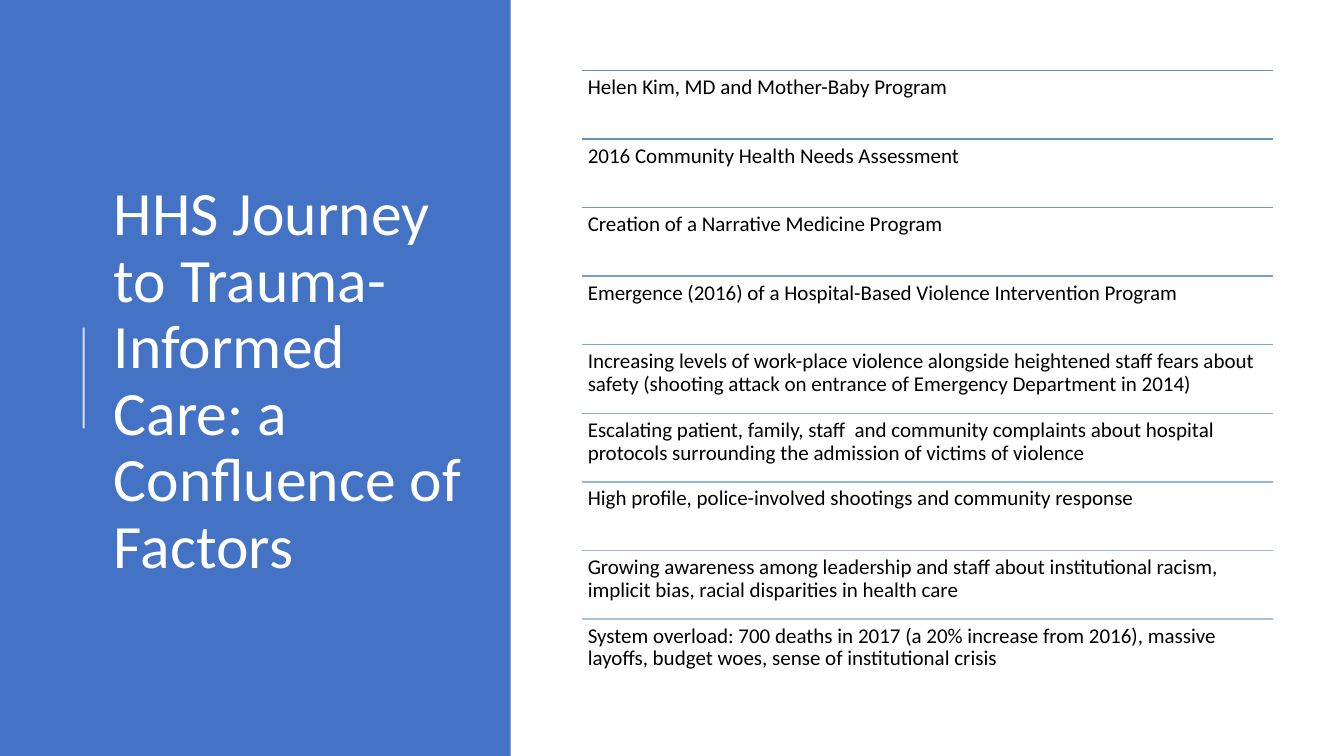
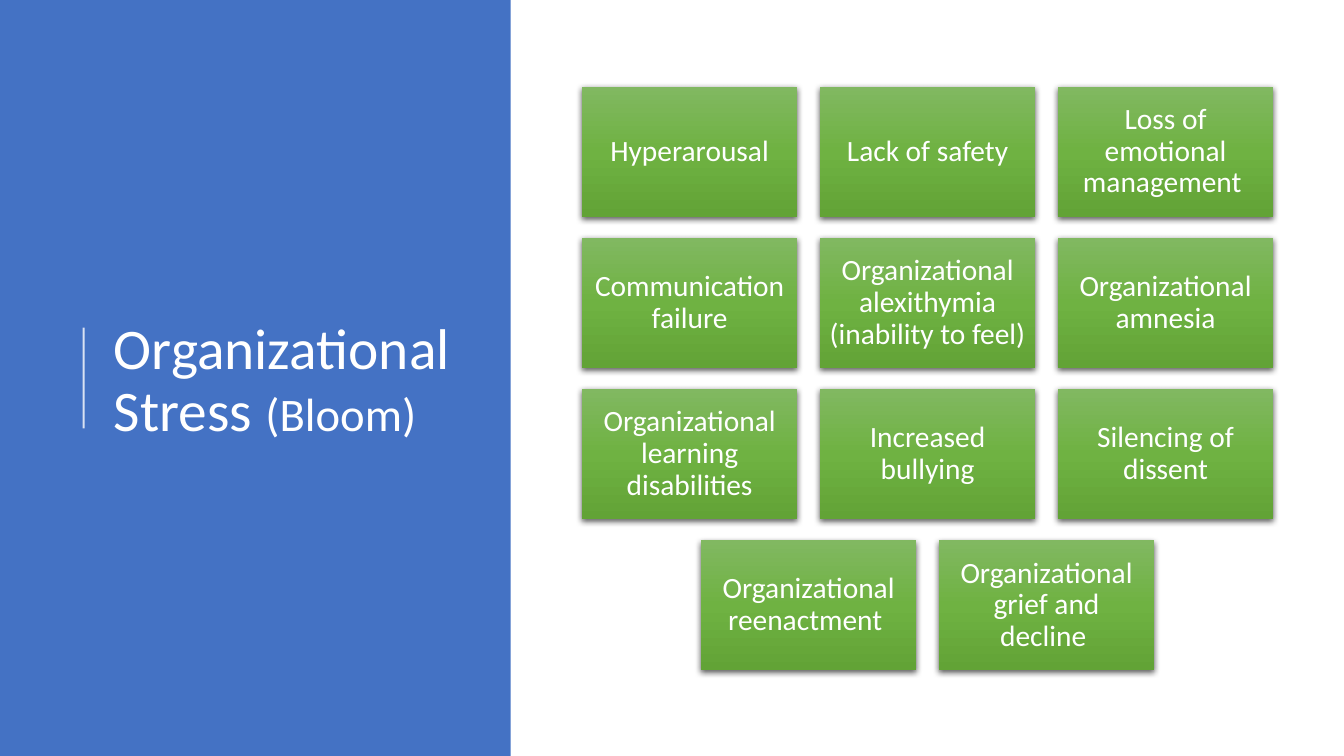
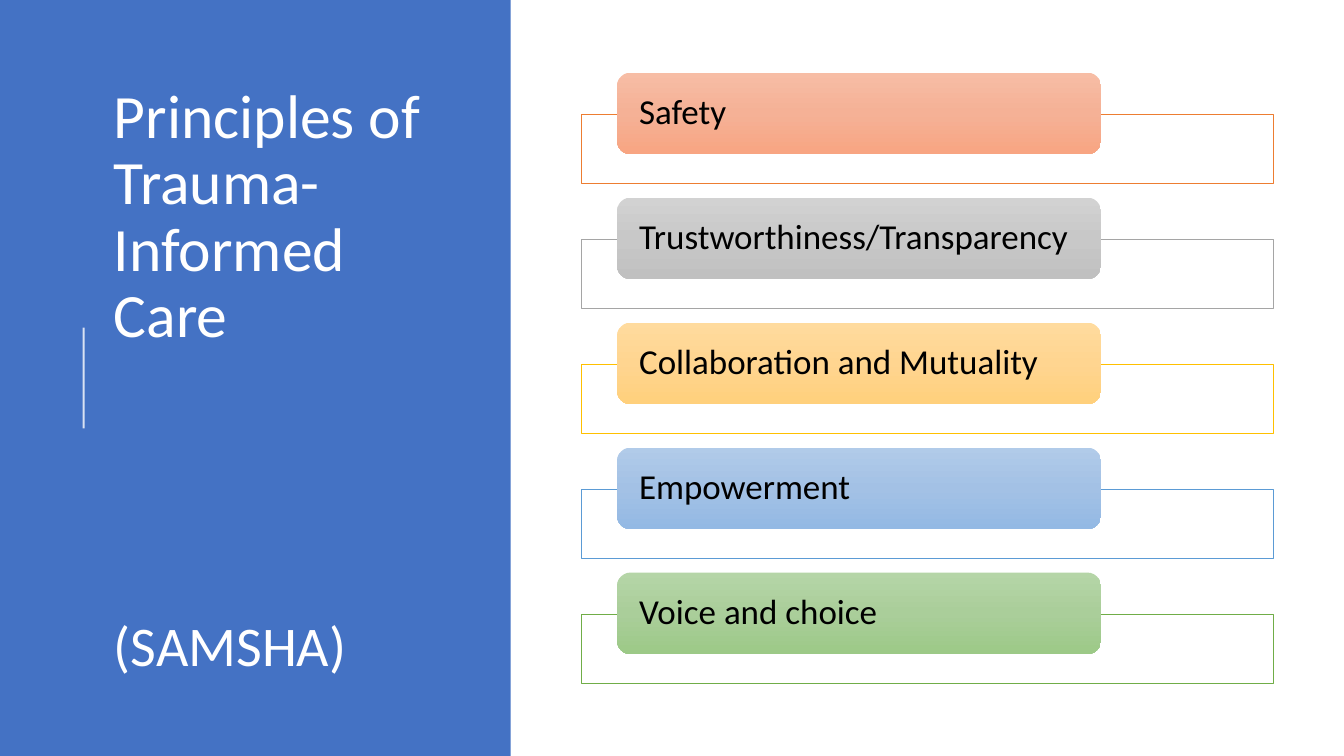
from copy import deepcopy
from dataclasses import dataclass

from lxml.etree import SubElement
from pptx import Presentation
from pptx.dml.color import RGBColor
from pptx.enum.shapes import MSO_CONNECTOR as Connector, MSO_SHAPE as Preset
from pptx.enum.text import MSO_ANCHOR as Anchor, MSO_AUTO_SIZE as AutoSize, PP_ALIGN as Align
from pptx.oxml.ns import qn
from pptx.util import Inches, Pt

SLIDE_WIDTH, SLIDE_HEIGHT = 13.33, 7.5
BAND_SHARE = 0.38
CONTENT_LEFT, CONTENT_WIDTH = 5.77, 6.86
FONT = "Calibri"
LINE_SPACING = 0.9
COLORS = {
    "band": "4472C4",
    "white": "FFFFFF",
    "black": "000000",
    "rule_first": "538DC1",
    "rule_last": "A5C1E3",
}
CARD_GRADIENT = ("81B861", "6FB242", "62A336")


@dataclass(frozen=True)
class Box:
    left: float
    top: float
    width: float
    height: float

    def lengths(self) -> tuple:
        return tuple(Inches(value) for value in (self.left, self.top, self.width, self.height))


@dataclass(frozen=True)
class Grid:
    left: float
    top: float
    cell_width: float
    cell_height: float
    column_pitch: float
    row_pitch: float

    def cell(self, column: float, row: int) -> Box:
        return Box(self.left + column * self.column_pitch, self.top + row * self.row_pitch,
                   self.cell_width, self.cell_height)


@dataclass(frozen=True)
class TitlePart:
    text: str
    size: float
    space_before: float | None = None


@dataclass(frozen=True)
class Principle:
    text: str
    outline: str
    gradient: tuple


TITLE_BOX = Box(1.03, 0.78, 3.69, 6.02)
FACTOR_GRID = Grid(CONTENT_LEFT, 0.7, CONTENT_WIDTH, 0.68, 0, 0.68)
CARD_GRID = Grid(CONTENT_LEFT, 0.86, 2.14, 1.29, 2.36, 1.5)
FRAME_GRID = Grid(CONTENT_LEFT, 1.13, CONTENT_WIDTH, 0.69, 0, 1.24)
PILL_GRID = Grid(6.12, 0.72, 4.8, 0.81, 0, 1.24)

FACTORS = (
    "Helen Kim, MD and Mother-Baby Program",
    "2016 Community Health Needs Assessment",
    "Creation of a Narrative Medicine Program",
    "Emergence (2016) of a Hospital-Based Violence Intervention Program",
    "Increasing levels of work-place violence alongside heightened staff fears about safety "
    "(shooting attack on entrance of Emergency Department in 2014)",
    "Escalating patient, family, staff  and community complaints about hospital protocols "
    "surrounding the admission of victims of violence",
    "High profile, police-involved shootings and community response",
    "Growing awareness among leadership and staff about institutional racism, implicit bias, "
    "racial disparities in health care",
    "System overload: 700 deaths in 2017 (a 20% increase from 2016), massive layoffs, "
    "budget woes, sense of institutional crisis",
)
STRESS_ROWS = (
    ("Hyperarousal", "Lack of safety", "Loss of emotional management "),
    ("Communication failure", "Organizational alexithymia (inability to feel)",
     "Organizational amnesia"),
    ("Organizational learning disabilities", "Increased bullying", "Silencing of dissent"),
    ("Organizational reenactment ", "Organizational grief and decline "),
)
PRINCIPLES = (
    Principle("Safety", "ED7D31", ("F7BDA5", "F5B196", "F8A582")),
    Principle("Trustworthiness/Transparency", "A5A5A5", ("D2D2D2", "C8C8C8", "C0C0C0")),
    Principle("Collaboration and Mutuality", "FFC000", ("FFDB9E", "FFD590", "FFD07C")),
    Principle("Empowerment", "5B9BD5", ("B1CBE9", "A3C1E5", "93B9E4")),
    Principle("Voice and choice", "70AD47", ("B5D5A7", "AACE9A", "9CC987")),
)


def rgb(value: str) -> RGBColor:
    return RGBColor.from_string(value)


def blend(first: str, last: str, share: float) -> str:
    pairs = zip(rgb(first), rgb(last))
    return "".join(f"{round(start + (end - start) * share):02X}" for start, end in pairs)


def set_alpha(parent, percent: int) -> None:
    color = next(parent.iter(qn("a:srgbClr")))
    SubElement(color, qn("a:alpha")).set("val", str(percent * 1000))


def format_run(run, size: float, color: str) -> None:
    run.font.name = FONT
    run.font.size = Pt(size)
    run.font.color.rgb = rgb(color)


def set_text(shape, text: str, size: float, color: str, insets: tuple,
             anchor=Anchor.MIDDLE, align=Align.LEFT) -> None:
    frame = shape.text_frame
    frame.text = text
    frame.word_wrap = True
    frame.vertical_anchor = anchor
    frame.margin_left = frame.margin_right = Inches(insets[0])
    frame.margin_top = frame.margin_bottom = Inches(insets[1])
    paragraph = frame.paragraphs[0]
    paragraph.alignment = align
    paragraph.line_spacing = LINE_SPACING
    format_run(paragraph.runs[0], size, color)


def add_box(slide, preset, box: Box, fill: str | tuple):
    shape = slide.shapes.add_shape(preset, *box.lengths())
    shape.shadow.inherit = False
    shape.line.fill.background()
    if isinstance(fill, str):
        shape.fill.solid()
        shape.fill.fore_color.rgb = rgb(fill)
        return shape
    shape.fill.gradient()
    shape.fill.gradient_angle = 270
    stops = next(shape.element.spPr.iter(qn("a:gsLst")))
    stops.append(deepcopy(stops[-1]))
    for stop, color, position in zip(shape.fill.gradient_stops, fill, (0, 0.5, 1)):
        stop.color.rgb = rgb(color)
        stop.position = position
    return shape


def add_card_shadow(shape) -> None:
    effects = shape.element.spPr.find(qn("a:effectLst"))
    shadow = SubElement(effects, qn("a:outerShdw"), blurRad=str(Pt(4.5)), dist=str(Pt(1.5)),
                        dir="5400000", algn="ctr", rotWithShape="0")
    SubElement(shadow, qn("a:srgbClr")).set("val", COLORS["black"])
    set_alpha(shadow, 63)


def add_line(slide, start: tuple, end: tuple, color: str, width: float):
    points = (Inches(value) for value in (*start, *end))
    line = slide.shapes.add_connector(Connector.STRAIGHT, *points)
    line.line.color.rgb = rgb(color)
    line.line.width = Pt(width)
    SubElement(line.element.spPr, qn("a:effectLst"))
    return line


def add_titled_slide(presentation, parts: tuple):
    slide = presentation.slides.add_slide(presentation.slide_layouts[5])
    add_box(slide, Preset.RECTANGLE, Box(0, 0, SLIDE_WIDTH * BAND_SHARE, SLIDE_HEIGHT),
            COLORS["band"])
    accent = add_line(slide, (0.83, 4.25), (0.83, 3.25), COLORS["white"], 1.5)
    set_alpha(accent.element.spPr, 80)
    title = slide.shapes.title
    title.left, title.top, title.width, title.height = TITLE_BOX.lengths()
    title.element.getparent().append(title.element)
    frame = title.text_frame
    frame.word_wrap = True
    frame.auto_size = AutoSize.NONE
    frame.vertical_anchor = Anchor.MIDDLE
    paragraph = frame.paragraphs[0]
    for part in parts:
        if part.space_before is not None:
            paragraph = frame.add_paragraph()
            paragraph.space_before = Pt(part.space_before)
        paragraph.alignment = Align.LEFT
        paragraph.line_spacing = LINE_SPACING
        run = paragraph.add_run()
        run.text = part.text
        format_run(run, part.size, COLORS["white"])
    return slide


def add_journey_slide(presentation) -> None:
    slide = add_titled_slide(presentation, (
        TitlePart("HHS Journey to Trauma-Informed Care: a Confluence of Factors", 44),))
    for row, factor in enumerate(FACTORS):
        box = FACTOR_GRID.cell(0, row)
        color = blend(COLORS["rule_first"], COLORS["rule_last"], row / (len(FACTORS) - 1))
        add_line(slide, (box.left, box.top), (box.left + box.width, box.top), color, 1)
        label = slide.shapes.add_textbox(*box.lengths())
        set_text(label, factor, 15, COLORS["black"], (0.06, 0.06), Anchor.TOP)


def add_stress_slide(presentation) -> None:
    slide = add_titled_slide(presentation, (
        TitlePart("Organizational Stress ", 41), TitlePart("(Bloom)", 33.3)))
    columns = max(len(cards) for cards in STRESS_ROWS)
    for row, cards in enumerate(STRESS_ROWS):
        first_column = (columns - len(cards)) / 2
        for column, text in enumerate(cards):
            box = CARD_GRID.cell(first_column + column, row)
            card = add_box(slide, Preset.RECTANGLE, box, CARD_GRADIENT)
            add_card_shadow(card)
            set_text(card, text, 21, COLORS["white"], (0.09, 0.09), align=Align.CENTER)


def add_principles_slide(presentation) -> None:
    slide = add_titled_slide(presentation, (
        TitlePart("Principles of Trauma-Informed Care ", 44), TitlePart("(SAMSHA)", 40, 191)))
    for row, principle in enumerate(PRINCIPLES):
        frame = add_box(slide, Preset.RECTANGLE, FRAME_GRID.cell(0, row), COLORS["white"])
        set_alpha(frame.element.spPr, 90)
        frame.line.color.rgb = rgb(principle.outline)
        frame.line.width = Pt(0.5)
        pill = add_box(slide, Preset.ROUNDED_RECTANGLE, PILL_GRID.cell(0, row),
                       principle.gradient)
        set_text(pill, principle.text, 25, COLORS["black"], (0.18, 0))


def main() -> None:
    presentation = Presentation()
    presentation.slide_width = Inches(SLIDE_WIDTH)
    presentation.slide_height = Inches(SLIDE_HEIGHT)
    add_journey_slide(presentation)
    add_stress_slide(presentation)
    add_principles_slide(presentation)
    presentation.save("out.pptx")


if __name__ == "__main__":
    main()
